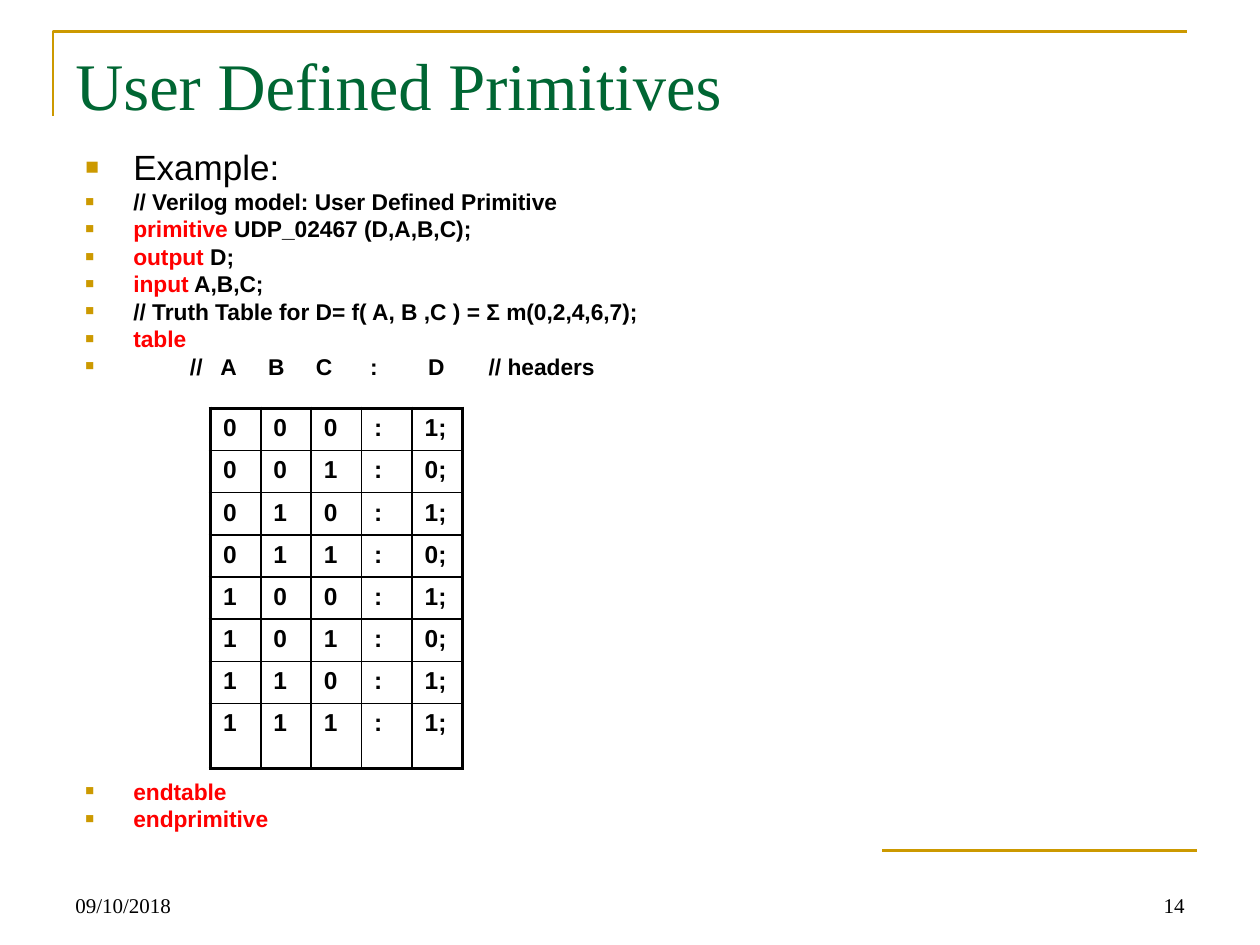
from dataclasses import dataclass

from lxml.etree import SubElement
from pptx import Presentation
from pptx.dml.color import RGBColor
from pptx.enum.text import MSO_ANCHOR, PP_ALIGN
from pptx.oxml.ns import qn
from pptx.util import Inches, Pt


@dataclass(frozen=True)
class Theme:
    gold: str = "CC9900"
    green: str = "006633"
    red: str = "FF0000"
    black: str = "000000"
    serif: str = "Times New Roman"
    sans: str = "Arial"
    title: float = 38
    heading: float = 20
    code: float = 13
    cell: float = 14
    footer: float = 12
    rule: float = 1.5
    grid: float = 1
    frame: float = 2.25


THEME = Theme()
TITLE = dict(name=THEME.serif, size=THEME.title, color=THEME.green)
FOOTER = dict(name=THEME.serif, size=THEME.footer, color=THEME.black)
HEADING = dict(name=THEME.sans, size=THEME.heading, color=THEME.black)
CODE = dict(name=THEME.sans, size=THEME.code, color=THEME.black, bold=True)
KEYWORD = CODE | dict(color=THEME.red)
CELL = CODE | dict(size=THEME.cell)

CODE_LINES = [
    [("Example:", HEADING)],
    [("// Verilog model: User Defined Primitive", CODE)],
    [("primitive", KEYWORD), (" UDP_02467 (D,A,B,C);", CODE)],
    [("output", KEYWORD), (" D;", CODE)],
    [("input", KEYWORD), (" A,B,C;", CODE)],
    [("// Truth Table for D= f( A, B ,C ) = Σ m(0,2,4,6,7);", CODE)],
    [("table", KEYWORD)],
    [("\t//\tA\tB\tC\t:\tD\t// headers", CODE)],
    [("endtable", KEYWORD)],
    [("endprimitive", KEYWORD)],
]
HEADER_LINE, END_LINE = 7, 8
HEADER_STOPS = [0.83, 1.07, 1.45, 1.83, 2.26, 2.72, 3.2]
INDENT = 0.38
LINE_GAP = 3.2
TABLE_GAP = 230.3
OUTPUTS = "10101011"


def add_span(para, text, style):
    span = para.add_run()
    span.text = text
    values = dict(style)
    span.font.color.rgb = RGBColor.from_string(values.pop("color"))
    values["size"] = Pt(values["size"])
    for key, value in values.items():
        setattr(span.font, key, value)


def add_text_box(page, box, anchor=MSO_ANCHOR.TOP):
    frame = page.shapes.add_textbox(*map(Inches, box)).text_frame
    frame.word_wrap = True
    frame.vertical_anchor = anchor
    return frame


def add_label(page, box, text, style, anchor, align=PP_ALIGN.LEFT):
    para = add_text_box(page, box, anchor).paragraphs[0]
    para.alignment = align
    add_span(para, text, style)


def add_bullet(para):
    properties = para._p.get_or_add_pPr()
    properties.set("marL", str(Inches(INDENT)))
    properties.set("indent", str(-Inches(INDENT)))
    color = SubElement(properties, qn("a:buClr"))
    SubElement(color, qn("a:srgbClr"), val=THEME.gold)
    SubElement(properties, qn("a:buSzPct"), val="65000")
    SubElement(properties, qn("a:buFont"), typeface=THEME.sans)
    SubElement(properties, qn("a:buChar"), char="■")


def add_tab_stops(para, stops):
    tabs = SubElement(para._p.get_or_add_pPr(), qn("a:tabLst"))
    for stop in stops:
        SubElement(tabs, qn("a:tab"), pos=str(Inches(stop)), algn="l")


def add_code(page, box):
    frame = add_text_box(page, box)
    for index, spans in enumerate(CODE_LINES):
        para = frame.add_paragraph() if index else frame.paragraphs[0]
        para.line_spacing = 0.8
        para.space_before = Pt(TABLE_GAP if index == END_LINE else LINE_GAP)
        add_bullet(para)
        if index == HEADER_LINE:
            add_tab_stops(para, HEADER_STOPS)
        for text, style in spans:
            add_span(para, text, style)


def set_border(cell, side, width):
    line = SubElement(cell._tc.get_or_add_tcPr(), qn(f"a:ln{side}"), w=str(Pt(width)))
    fill = SubElement(line, qn("a:solidFill"))
    SubElement(fill, qn("a:srgbClr"), val=THEME.black)


def add_truth_table(page, box):
    """Rows count up in binary; the last row takes the height left over."""
    rows, columns, row_height = len(OUTPUTS), 5, 0.335
    table = page.shapes.add_table(rows, columns, *map(Inches, box)).table
    table.first_row = table.horz_banding = False
    for row in table.rows:
        row.height = Inches(row_height)
    table.rows[rows - 1].height = Inches(box[3] - row_height * (rows - 1))
    for r, output in enumerate(OUTPUTS):
        for c, text in enumerate([*f"{r:03b}", ":", f"{output};"]):
            cell = table.cell(r, c)
            add_span(cell.text_frame.paragraphs[0], text, CELL)
            outer = {"L": c == 0, "R": c == columns - 1, "T": r == 0, "B": r == rows - 1}
            for side, is_outer in outer.items():
                set_border(cell, side, THEME.frame if is_outer else THEME.grid)
            cell.fill.background()


def style_rule(shape):
    shape.line.color.rgb = RGBColor.from_string(THEME.gold)
    shape.line.width = Pt(THEME.rule)


def add_corner_rule(page, box):
    left, top, width, height = map(Inches, box)
    outline = page.shapes.build_freeform(left, top + height)
    outline.add_line_segments([(left, top), (left + width, top)], close=False)
    corner = outline.convert_to_shape()
    corner.shadow.inherit = False
    corner.fill.background()
    style_rule(corner)


def add_footer(page, box):
    left, top, width, height = box
    right, label_width = left + width, 2.33
    rule = page.shapes.add_connector(
        1, Inches(right - 2.5), Inches(top), Inches(right), Inches(top))
    SubElement(rule._element.spPr, qn("a:effectLst"))
    style_rule(rule)
    label_top, label_height = top + 0.08, height - 0.08
    for x, text, align in [(left, "09/10/2018", PP_ALIGN.LEFT),
                           (right - label_width, "14", PP_ALIGN.RIGHT)]:
        add_label(page, (x, label_top, label_width, label_height), text, FOOTER,
                  MSO_ANCHOR.BOTTOM, align)


def main():
    deck = Presentation()
    deck.slide_width, deck.slide_height = Inches(10), Inches(7.5)
    page = deck.slides.add_slide(deck.slide_layouts[6])
    add_corner_rule(page, (0.42, 0.25, 9, 0.67))
    add_footer(page, (0.5, 6.75, 9, 0.58))
    add_label(page, (0.5, 0.3, 9, 0.78), "User Defined Primitives", TITLE, MSO_ANCHOR.TOP)
    add_code(page, (0.58, 1.17, 5.17, 5.75))
    add_truth_table(page, (1.67, 3.24, 2, 2.86))
    deck.save("out.pptx")


if __name__ == "__main__":
    main()
